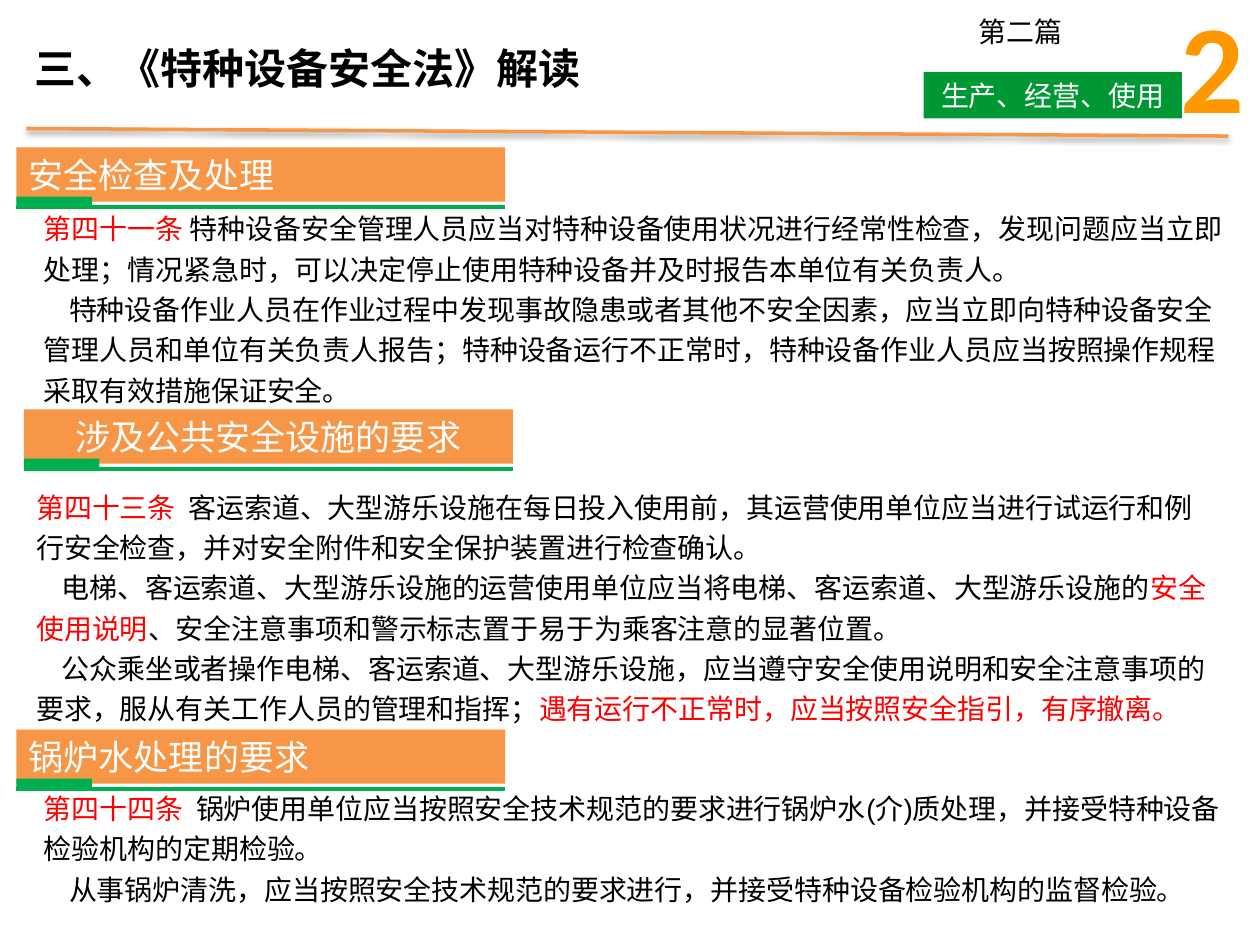
from lxml import etree
from pptx import Presentation
from pptx.dml.color import RGBColor
from pptx.enum.shapes import MSO_CONNECTOR, MSO_SHAPE
from pptx.enum.text import MSO_ANCHOR, PP_ALIGN
from pptx.oxml.ns import qn
from pptx.util import Inches, Pt

BLACK = RGBColor(0x00, 0x00, 0x00)
WHITE = RGBColor(0xFF, 0xFF, 0xFF)
RED = RGBColor(0xFF, 0x00, 0x00)
ORANGE = RGBColor(0xF7, 0x96, 0x46)
AMBER = RGBColor(0xFF, 0x97, 0x00)
GREEN = RGBColor(0x00, 0xB0, 0x50)
TAG_GREEN = RGBColor(0x00, 0x98, 0x34)
CJK = "Noto Sans CJK SC"

# Each article is a list of paragraphs, each paragraph a list of (text, colour).
ARTICLE_41 = [
    [("第四十一条 ", RED),
     ("特种设备安全管理人员应当对特种设备使用状况进行经常性检查，发现问题应当立即处理；"
      "情况紧急时，可以决定停止使用特种设备并及时报告本单位有关负责人。", BLACK)],
    [("特种设备作业人员在作业过程中发现事故隐患或者其他不安全因素，应当立即向特种设备安全"
      "管理人员和单位有关负责人报告；特种设备运行不正常时，特种设备作业人员应当按照操作规程"
      "采取有效措施保证安全。", BLACK)],
]
ARTICLE_43 = [
    [("第四十三条  ", RED),
     ("客运索道、大型游乐设施在每日投入使用前，其运营使用单位应当进行试运行和例行安全检查，"
      "并对安全附件和安全保护装置进行检查确认。", BLACK)],
    [("电梯、客运索道、大型游乐设施的运营使用单位应当将电梯、客运索道、大型游乐设施的", BLACK),
     ("安全使用说明", RED),
     ("、安全注意事项和警示标志置于易于为乘客注意的显著位置。", BLACK)],
    [("公众乘坐或者操作电梯、客运索道、大型游乐设施，应当遵守安全使用说明和安全注意事项的"
      "要求，服从有关工作人员的管理和指挥；", BLACK),
     ("遇有运行不正常时，应当按照安全指引，有序撤离。", RED)],
]
ARTICLE_44 = [
    [("第四十四条  ", RED),
     ("锅炉使用单位应当按照安全技术规范的要求进行锅炉水(介)质处理，"
      "并接受特种设备检验机构的定期检验。", BLACK)],
    [("从事锅炉清洗，应当按照安全技术规范的要求进行，"
      "并接受特种设备检验机构的监督检验。", BLACK)],
]


def style_run(span, size, color, font=CJK, bold=False):
    span.font.size = Pt(size)
    span.font.color.rgb = color
    span.font.name = font
    span.font.bold = bold
    east_asian = etree.SubElement(span.font._element, qn("a:ea"))
    east_asian.set("typeface", CJK)


def set_label(shape, text, size, color, align=PP_ALIGN.LEFT, **style):
    """Write one styled paragraph into a shape."""
    frame = shape.text_frame
    frame.text = text
    para = frame.paragraphs[0]
    para.alignment = align
    style_run(para.runs[0], size, color, **style)


def add_label(slide, box, text, size, color, **style):
    label = slide.shapes.add_textbox(*map(Inches, box))
    label.text_frame.word_wrap = False
    set_label(label, text, size, color, **style)


def add_bar(slide, box, color):
    bar = slide.shapes.add_shape(MSO_SHAPE.RECTANGLE, *map(Inches, box))
    bar.shadow.inherit = False
    bar.fill.solid()
    bar.fill.fore_color.rgb = color
    bar.line.fill.background()
    bar.text_frame.vertical_anchor = MSO_ANCHOR.MIDDLE
    return bar


def add_line(slide, start, end, color, width):
    """Add a line and return its effect list, empty so that no shadow shows."""
    line = slide.shapes.add_connector(
        MSO_CONNECTOR.STRAIGHT, *map(Inches, (*start, *end)))
    line.line.color.rgb = color
    line.line.width = Pt(width)
    return etree.SubElement(line._element.spPr, qn("a:effectLst"))


def add_header_rule(slide):
    effects = add_line(slide, (0.21, 1.02), (9.75, 1.08), ORANGE, 2)
    shadow = etree.SubElement(
        effects, qn("a:outerShdw"), blurRad=str(Pt(3.1)), dist=str(Pt(1.6)),
        dir="5400000", rotWithShape="0")
    color = etree.SubElement(shadow, qn("a:srgbClr"), val="000000")
    etree.SubElement(color, qn("a:alpha"), val="38000")


def add_section_heading(slide, left, top, text, align=PP_ALIGN.LEFT):
    """Orange bar over a green line that thickens at its left end."""
    width = 3.88
    base = top + 0.47
    add_line(slide, (left, base), (left + width, base), GREEN, 2.25)
    bar = add_bar(slide, (left, top, width, 0.43), ORANGE)
    set_label(bar, text, 20, WHITE, align)
    add_bar(slide, (left, base - 0.08, 0.6, 0.08), GREEN)


def add_article(slide, box, article):
    frame = slide.shapes.add_textbox(*map(Inches, box)).text_frame
    frame.word_wrap = True
    for index, parts in enumerate(article):
        para = frame.add_paragraph() if index else frame.paragraphs[0]
        para.line_spacing = 1.2
        if index:
            para._p.get_or_add_pPr().set("indent", str(Inches(0.2)))
        for text, color in parts:
            span = para.add_run()
            span.text = text
            style_run(span, 16, color, font="Arial")


def add_title(slide):
    title = slide.shapes.title
    title.left, title.top, title.width, title.height = map(
        Inches, (0.17, 0.28, 4.58, 0.51))
    title.text_frame.word_wrap = False
    set_label(title, "三、《特种设备安全法》解读", 24, BLACK, bold=True)


def add_chapter_tag(slide):
    tag = add_bar(slide, (7.33, 0.57, 2.05, 0.37), TAG_GREEN)
    set_label(tag, "生产、经营、使用", 16, WHITE, PP_ALIGN.CENTER)
    add_label(slide, (7.67, 0.07, 0.87, 0.37), "第二篇", 16, BLACK)
    add_label(slide, (9.27, -0.15, 0.71, 1.31), "2", 72, AMBER,
              font="Calibri", bold=True)


def main():
    deck = Presentation()
    deck.slide_width, deck.slide_height = Inches(10), Inches(7.5)
    slide = deck.slides.add_slide(deck.slide_layouts[5])
    add_title(slide)
    add_header_rule(slide)
    add_chapter_tag(slide)

    add_section_heading(slide, 0.13, 1.17, "安全检查及处理")
    add_article(slide, (0.25, 1.58, 9.58, 1.72), ARTICLE_41)
    add_section_heading(slide, 0.19, 3.25, "涉及公共安全设施的要求", PP_ALIGN.CENTER)
    add_article(slide, (0.19, 3.79, 9.56, 2.04), ARTICLE_43)
    add_section_heading(slide, 0.13, 5.79, "锅炉水处理的要求")
    add_article(slide, (0.25, 6.18, 9.58, 1.07), ARTICLE_44)

    deck.save("out.pptx")


if __name__ == "__main__":
    main()
